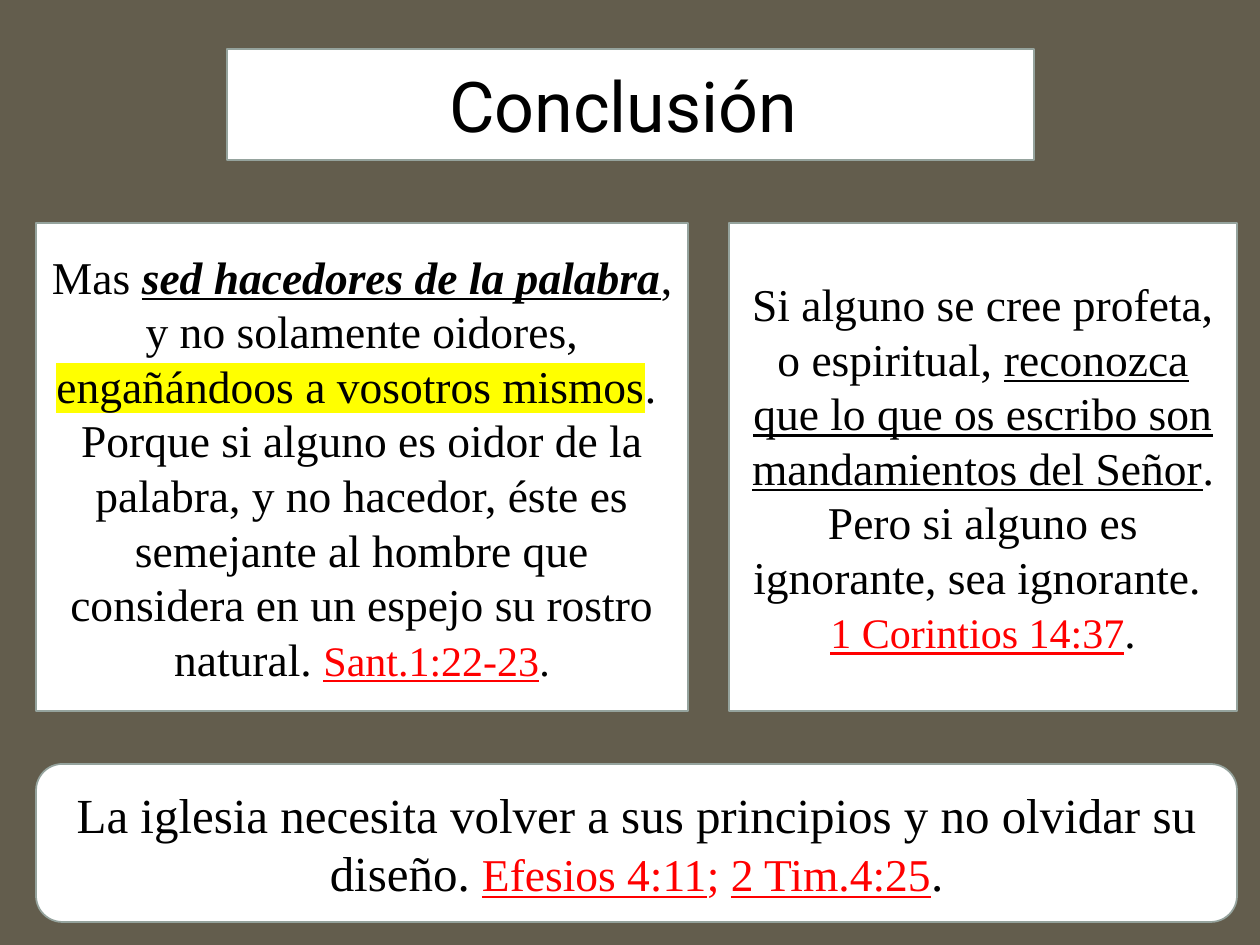
"""Build the "Conclusión" slide: a title, two Bible quotations and a closing statement."""
from lxml.etree import SubElement
from pptx import Presentation
from pptx.dml.color import RGBColor
from pptx.enum.shapes import MSO_SHAPE
from pptx.enum.text import MSO_ANCHOR, MSO_AUTO_SIZE, PP_ALIGN
from pptx.oxml.ns import qn
from pptx.util import Emu, Pt

SCALE = 914400 / 126
COLORS = {
    "background": "635D4D",
    "panel": "FFFFFF",
    "border": "95A39D",
    "text": "000000",
    "reference": "FF0000",
    "highlight": "FFFF00",
}
SERIF = "Times New Roman"
PLAIN = {"name": SERIF, "size": Pt(26)}
UNDERLINED = {**PLAIN, "underline": True}
EMPHASIS = {**UNDERLINED, "bold": True, "italic": True}
SMALL = {**PLAIN, "size": Pt(24)}
SMALL_LINK = {**SMALL, "underline": True}
LARGE = {**PLAIN, "size": Pt(28)}
HEADING = {"name": "Roboto", "size": Pt(40)}


def px(length):
    return Emu(round(length * SCALE))


def color(name):
    return RGBColor.from_string(COLORS[name])


deck = Presentation()
deck.slide_width, deck.slide_height = px(1260), px(945)
page = deck.slides.add_slide(deck.slide_layouts[5])
page.background.fill.solid()
page.background.fill.fore_color.rgb = color("background")

title = page.shapes.title
title.left, title.top, title.width, title.height = map(px, (227, 49, 807, 111))
SubElement(SubElement(title._element.spPr, qn("a:prstGeom"), prst="roundRect"), qn("a:avLst"))

left_quote, right_quote, statement = [
    page.shapes.add_shape(kind, *map(px, place))
    for kind, place in (
        (MSO_SHAPE.RECTANGLE, (36, 223, 652, 488)),
        (MSO_SHAPE.RECTANGLE, (729, 223, 508, 488)),
        (MSO_SHAPE.ROUNDED_RECTANGLE, (36, 764, 1201, 158)),
    )
]

contents = [
    (title, [[("Conclusión", HEADING, "text")]]),
    (left_quote, [[
        ("Mas ", PLAIN, "text"),
        ("sed hacedores de la palabra", EMPHASIS, "text"),
        (", y no solamente oidores, ", PLAIN, "text"),
        ("engañándoos a vosotros mismos", PLAIN, "highlight"),
        (".  Porque si alguno es oidor de la palabra, y no hacedor, éste es semejante "
         "al hombre que considera en un espejo su rostro natural. ", PLAIN, "text"),
        ("Sant.1:22-23", SMALL_LINK, "reference"),
        (".", SMALL, "text"),
    ]]),
    (right_quote, [
        [
            ("Si alguno se cree profeta, o espiritual, ", PLAIN, "text"),
            ("reconozca que lo que os escribo son mandamientos del Señor", UNDERLINED, "text"),
            (". Pero si alguno es ignorante, sea ignorante. ", PLAIN, "text"),
        ],
        [
            ("1 Corintios 14:37", SMALL_LINK, "reference"),
            (".", PLAIN, "text"),
        ],
    ]),
    (statement, [[
        ("La iglesia necesita volver a sus principios y no olvidar su diseño. ", LARGE, "text"),
        ("Efesios 4:11", UNDERLINED, "reference"),
        ("; ", PLAIN, "reference"),
        ("2 Tim.4:25", UNDERLINED, "reference"),
        (".", LARGE, "text"),
    ]]),
]

for box, paragraphs in contents:
    box.fill.solid()
    box.fill.fore_color.rgb = color("panel")
    box.line.color.rgb = color("border")
    box.line.width = Pt(1)
    box.shadow.inherit = False
    frame = box.text_frame
    frame.word_wrap = True
    frame.auto_size = MSO_AUTO_SIZE.NONE
    frame.vertical_anchor = MSO_ANCHOR.MIDDLE
    for index, pieces in enumerate(paragraphs):
        para = frame.add_paragraph() if index else frame.paragraphs[0]
        para.alignment = PP_ALIGN.CENTER
        for text, formats, role in pieces:
            span = para.add_run()
            span.text = text
            highlighted = role == "highlight"
            span.font.color.rgb = color("text" if highlighted else role)
            if highlighted:
                marker = SubElement(span.font._element, qn("a:highlight"))
                SubElement(marker, qn("a:srgbClr"), val=COLORS["highlight"])
            for attribute, value in formats.items():
                setattr(span.font, attribute, value)

title.text_frame.margin_right = px(27)

deck.save("out.pptx")
